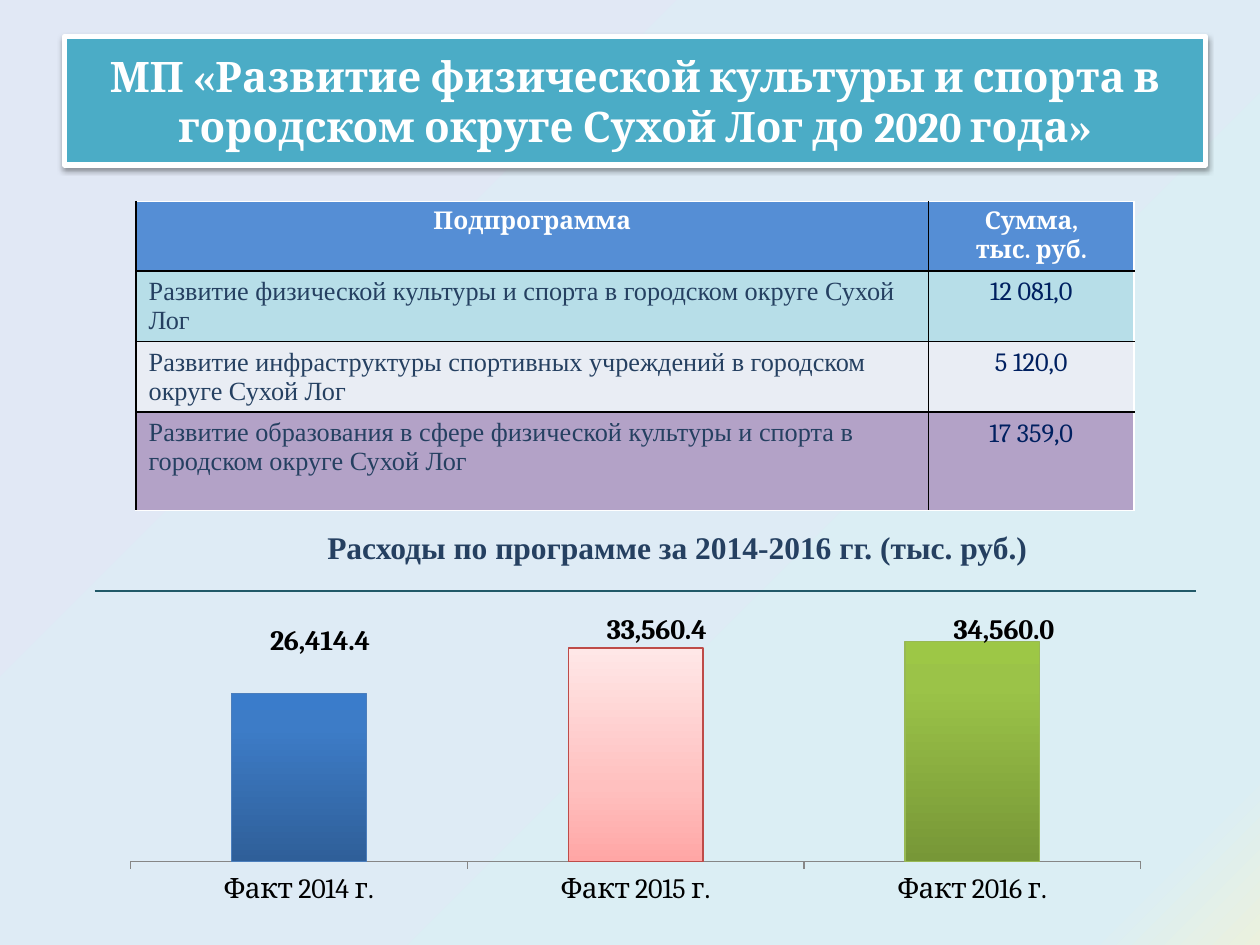
from lxml import etree
from pptx import Presentation
from pptx import util as u
from pptx.chart import data
from pptx.dml import color
from pptx.enum import chart as ch, shapes, text
from pptx.oxml import ns, parse_xml

COLORS = {
    "white": "FFFFFF", "black": "000000", "teal": "4BACC6", "rule": "215968",
    "header": "558ED5", "navy": "254061", "amount": "002060", "axis": "868686",
}
BACKGROUND = [(0, "EBF1DE"), (8, "DBEEF4"), (100, "E1E8F5")]
HEADINGS = ["Подпрограмма", "Сумма,\nтыс. руб."]
SUBPROGRAMS = [
    ("Развитие физической культуры и спорта в городском округе Сухой Лог",
     "12 081,0", "B7DEE8"),
    ("Развитие инфраструктуры спортивных учреждений в городском округе Сухой Лог",
     "5 120,0", "E9EDF4"),
    ("Развитие образования в сфере физической культуры и спорта в городском округе Сухой Лог",
     "17 359,0", "B3A2C7"),
]
YEARS = [
    ("Факт 2014 г.", 26414.4, "4B7EBC", (0.02, -0.44),
     [(0, "2F5F99"), (80, "3D7CC7"), (100, "3A7CCB")]),
    ("Факт 2015 г.", 33560.4, "BE4B48", (0.02, -0.4),
     [(0, "FFA6A5"), (35, "FFC0BF"), (100, "FFE7E7")]),
    ("Факт 2016 г.", 34560.0, "98B954", (0.03, -0.39),
     [(0, "779737"), (80, "9BC348"), (100, "9DC746")]),
]
NUMBER_FORMAT = "#,##0.0"


def rgb(value):
    return color.RGBColor.from_string(value)


def box(left, top, width, height):
    return [u.Inches(length) for length in (left, top, width, height)]


def style_font(font, name, size, shade, bold=False):
    font.name, font.size, font.bold = name, u.Pt(size), bold
    font.color.rgb = rgb(shade)


def write(frame, wording, name, size, shade, bold=False, align=text.PP_ALIGN.CENTER):
    frame.text = wording
    for paragraph in frame.paragraphs:
        paragraph.alignment = align
        for run in paragraph.runs:
            style_font(run.font, name, size, shade, bold)


def paint_gradient(fill, root, stops, angle):
    fill.gradient()
    fill.gradient_angle = 360 - angle
    stop_list = root.xpath(".//a:gsLst")[-1]
    for stop in list(stop_list):
        stop_list.remove(stop)
    for position, shade in stops:
        stop = etree.SubElement(stop_list, ns.qn("a:gs"), pos=str(position * 1000))
        etree.SubElement(stop, ns.qn("a:srgbClr"), val=shade)


def add_title(slide):
    title = slide.shapes.title
    title.left, title.top, title.width, title.height = box(0.51, 0.29, 9.06, 1.02)
    title.fill.solid()
    title.fill.fore_color.rgb = rgb(COLORS["teal"])
    title.line.color.rgb = rgb(COLORS["white"])
    title.line.width = u.Pt(3)
    frame = title.text_frame
    write(frame, "МП «Развитие физической культуры и спорта в городском округе "
          "Сухой Лог до 2020 года»", "Cambria", 24, COLORS["white"], True)
    frame.word_wrap = True
    frame.auto_size = text.MSO_AUTO_SIZE.NONE
    frame.vertical_anchor = text.MSO_ANCHOR.MIDDLE
    title.element.spPr.append(parse_xml(
        f'<a:effectLst {ns.nsdecls("a")}><a:outerShdw blurRad="{u.Pt(3.1)}" '
        f'dist="{u.Pt(1.6)}" dir="5400000" rotWithShape="0"><a:srgbClr val="000000">'
        '<a:alpha val="38000"/></a:srgbClr></a:outerShdw></a:effectLst>'))


def add_rule(slide):
    rule = slide.shapes.add_connector(
        shapes.MSO_CONNECTOR.STRAIGHT, *box(0.75, 4.69, 9.49, 4.69))
    rule.line.color.rgb = rgb(COLORS["rule"])
    rule.line.width = u.Pt(1.5)
    etree.SubElement(rule.element.spPr, ns.qn("a:effectLst"))


def set_borders(cell, edges):
    properties = cell._tc.get_or_add_tcPr()
    for index, (side, shade) in enumerate(edges.items()):
        properties.insert(index, parse_xml(
            f'<a:ln{side} {ns.nsdecls("a")} w="{u.Pt(1)}"><a:solidFill>'
            f'<a:srgbClr val="{COLORS[shade]}"/></a:solidFill></a:ln{side}>'))


def add_subprograms(slide):
    heights = [0.55, 0.56, 0.56, 0.78]
    widths = [6.29, 1.63]
    table = slide.shapes.add_table(
        len(heights), len(widths), *box(1.08, 1.6, sum(widths), sum(heights))).table
    for column, width in zip(table.columns, widths):
        column.width = u.Inches(width)
    for row, height in zip(table.rows, heights):
        row.height = u.Inches(height)
    for column, heading in enumerate(HEADINGS):
        write(table.cell(0, column).text_frame, heading, "Cambria", 14,
              COLORS["white"], True)
    for row, (name, amount, _) in enumerate(SUBPROGRAMS, 1):
        write(table.cell(row, 0).text_frame, name, "Times New Roman", 15,
              COLORS["navy"], align=text.PP_ALIGN.LEFT)
        write(table.cell(row, 1).text_frame, amount, "Cambria", 15, COLORS["amount"])
    fills = [COLORS["header"]] + [shade for _, _, shade in SUBPROGRAMS]
    for row, shade in enumerate(fills):
        for column in range(len(widths)):
            cell = table.cell(row, column)
            cell.fill.solid()
            cell.fill.fore_color.rgb = rgb(shade)
            set_borders(cell, {
                "L": "black",
                "R": "white" if column == len(widths) - 1 else "black",
                "T": "white" if row == 0 else "black",
                "B": "white" if row == len(fills) - 1 else "black",
            })


def add_caption(slide):
    frame = slide.shapes.add_textbox(*box(0.94, 4.14, 8.35, 0.4)).text_frame
    frame.word_wrap = True
    frame.margin_left = u.Inches(0.62)
    write(frame, "Расходы по программе за 2014-2016 гг. (тыс. руб.)",
          "Times New Roman", 18, COLORS["navy"], True)


def manual_layout(target="", **fractions):
    values = "".join(f'<c:{key} val="{value}"/>' for key, value in fractions.items())
    return parse_xml(f'<c:layout {ns.nsdecls("c")}><c:manualLayout>{target}{values}'
                     '</c:manualLayout></c:layout>')


def place_label(point, root, offset):
    style_font(point.data_label.font, "Cambria", 16, COLORS["black"], True)
    label = root.xpath(".//c:dLbl")[-1]
    label.insert(1, manual_layout(x=offset[0], y=offset[1]))
    label.insert(2, parse_xml(f'<c:numFmt {ns.nsdecls("c")} '
                              f'formatCode="{NUMBER_FORMAT}" sourceLinked="0"/>'))


def hide_leader_lines(root):
    for labels in root.xpath(".//c:ser/c:dLbls"):
        for leader in labels.xpath("./c:showLeaderLines"):
            labels.remove(leader)
        etree.SubElement(labels, ns.qn("c:showLeaderLines"), val="0")
        labels.append(parse_xml(
            f'<c:extLst {ns.nsdecls("c")}>'
            '<c:ext uri="{CE6537A1-D6FC-4f65-9D91-7224C49458BB}" '
            'xmlns:c15="http://schemas.microsoft.com/office/drawing/2012/chart">'
            '<c15:showLeaderLines val="0"/></c:ext></c:extLst>'))


def add_spending(slide):
    spending = data.CategoryChartData(number_format=NUMBER_FORMAT)
    spending.categories = [year[0] for year in YEARS]
    spending.add_series("Series 1", [year[1] for year in YEARS])
    chart = slide.shapes.add_chart(
        ch.XL_CHART_TYPE.COLUMN_STACKED, *box(0.87, 4.77, 8.35, 2.46), spending).chart
    style_font(chart.font, "Calibri", 18, COLORS["black"])
    chart.has_legend = chart.has_title = False
    plot = chart.plots[0]
    plot.gap_width, plot.overlap, plot.vary_by_categories = 150, 100, False
    amounts, years = chart.value_axis, chart.category_axis
    amounts.minimum_scale, amounts.maximum_scale = 0, 40000
    amounts.has_major_gridlines = amounts.visible = False
    years.major_tick_mark = ch.XL_TICK_MARK.OUTSIDE
    years.format.line.color.rgb = rgb(COLORS["axis"])
    style_font(years.tick_labels.font, "Cambria", 16, COLORS["black"])
    series = plot.series[0]
    for index, (_, _, outline, offset, stops) in enumerate(YEARS):
        bar = series.points[index]
        paint_gradient(bar.format.fill, chart.element, stops, 270)
        bar.format.line.color.rgb = rgb(outline)
        bar.format.line.width = u.Pt(0.75)
        place_label(bar, chart.element, offset)
    hide_leader_lines(chart.element)
    area = chart.element.xpath(".//c:plotArea")[0]
    for layout in area.xpath("./c:layout"):
        area.remove(layout)
    area.insert(0, manual_layout(
        '<c:layoutTarget val="inner"/><c:xMode val="edge"/><c:yMode val="edge"/>',
        x=0.02, y=0.02, w=0.96, h=0.82))


def main():
    deck = Presentation()
    deck.slide_width, deck.slide_height = u.Inches(10), u.Inches(7.5)
    slide = deck.slides.add_slide(deck.slide_layouts[5])
    paint_gradient(slide.background.fill, slide.element, BACKGROUND, 225)
    add_rule(slide)
    add_title(slide)
    add_subprograms(slide)
    add_caption(slide)
    add_spending(slide)
    deck.save("out.pptx")


if __name__ == "__main__":
    main()
